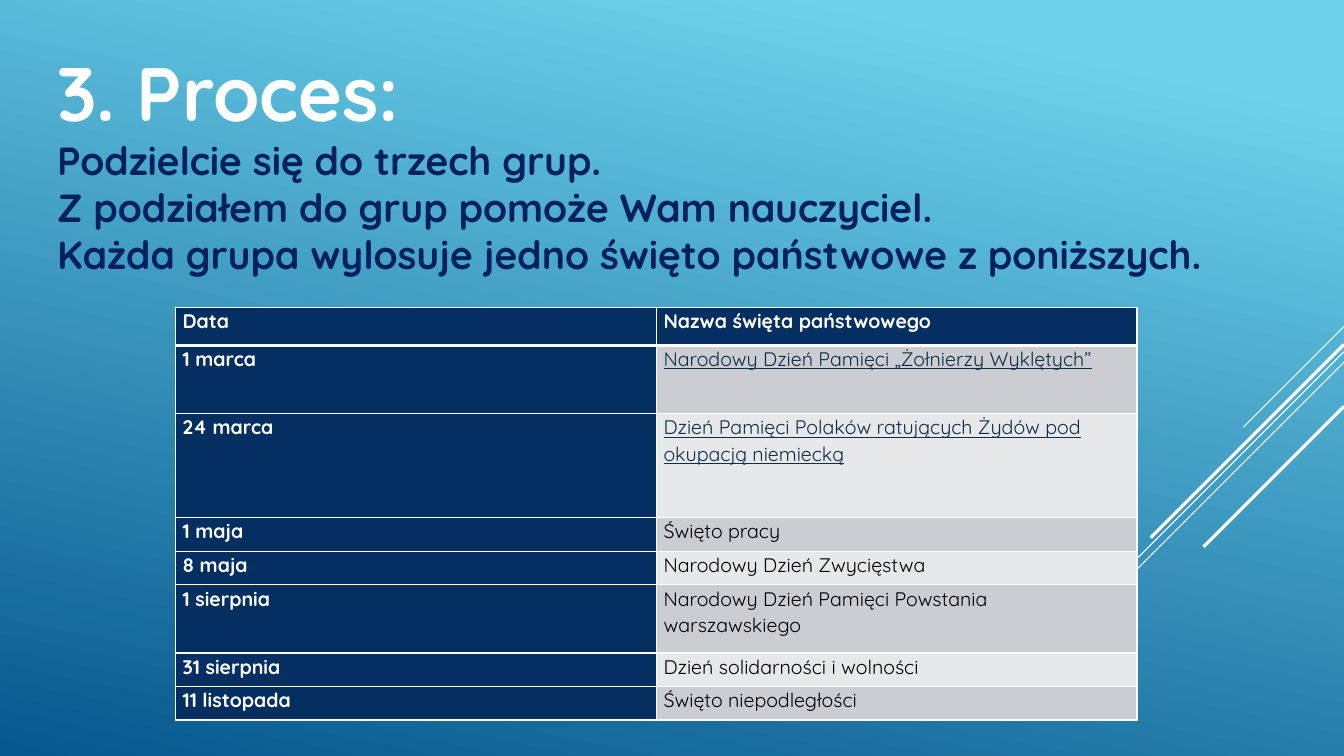
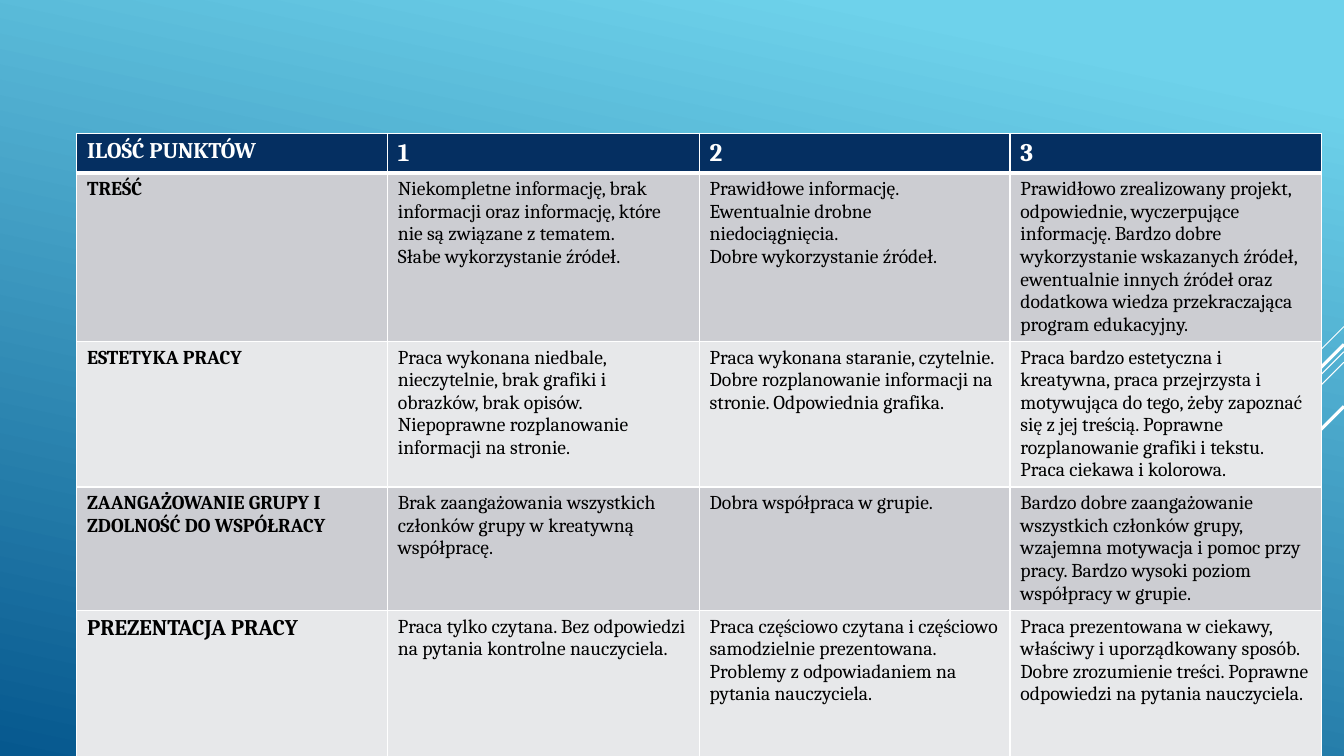
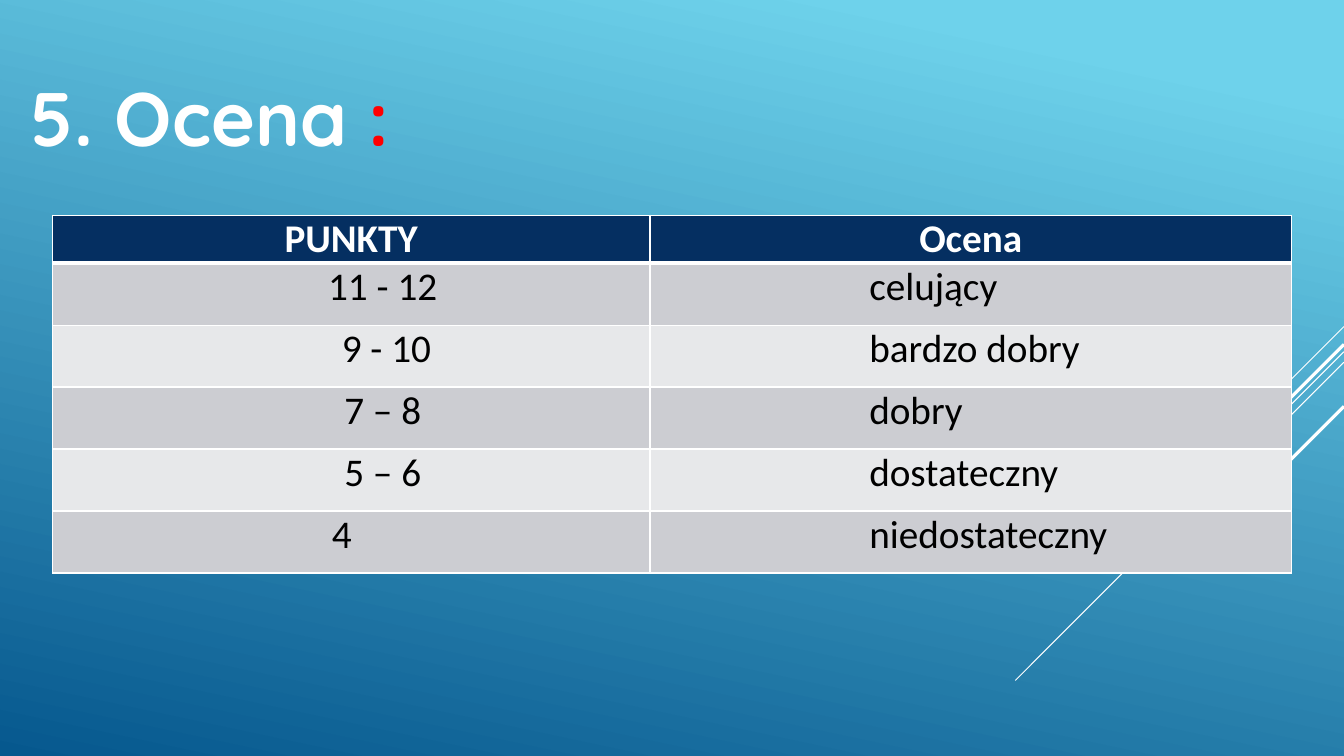
from dataclasses import dataclass

from lxml.etree import SubElement
from pptx import Presentation
from pptx.dml.color import RGBColor
from pptx.enum.shapes import MSO_CONNECTOR as Connector
from pptx.enum.text import MSO_ANCHOR as Anchor, PP_ALIGN as Align
from pptx.oxml.ns import qn
from pptx.util import Pt

PX = 9525
WIDTH, HEIGHT = 1280, 720
COLORS = {
    "white": "FFFFFF", "black": "000000", "red": "FF0000",
    "sky": "6ED2EB", "sea": "06588E", "ink": "002060",
    "header": "052F61", "link": "0D2E46",
    "odd": "CCCDD2", "even": "E7E8EA",
}
TITLE_FONT = "Quicksand"
TITLE_SIZE = 54
STRIPES = [(311, 96, 0.75), (335, 313, 0.75), (345, 199, 0.75),
           (328, 184, 2.25), (387, 134, 2.25)]

HOLIDAYS = [
    ("1 marca", "Narodowy Dzień Pamięci „Żołnierzy Wyklętych”", True),
    ("24 marca", "Dzień Pamięci Polaków ratujących Żydów pod okupacją niemiecką", True),
    ("1 maja", "Święto pracy", False),
    ("8 maja", "Narodowy Dzień Zwycięstwa", False),
    ("1 sierpnia", "Narodowy Dzień Pamięci Powstania warszawskiego", False),
    ("31 sierpnia", "Dzień solidarności i wolności", False),
    ("11 listopada", "Święto niepodległości", False),
]
CRITERIA = [
    ("TREŚĆ", 14,
     ["Niekompletne informację, brak informacji oraz informację, które nie są związane z tematem.",
      "Słabe wykorzystanie źródeł."],
     ["Prawidłowe informację. Ewentualnie drobne niedociągnięcia.",
      "Dobre wykorzystanie źródeł."],
     ["Prawidłowo zrealizowany projekt, odpowiednie, wyczerpujące informację. "
      "Bardzo dobre wykorzystanie wskazanych źródeł, ewentualnie innych źródeł "
      "oraz dodatkowa wiedza przekraczająca program edukacyjny."]),
    ("ESTETYKA PRACY", 14,
     ["Praca wykonana niedbale, nieczytelnie, brak grafiki i obrazków, brak opisów. "
      "Niepoprawne rozplanowanie informacji na stronie."],
     ["Praca wykonana staranie, czytelnie. Dobre rozplanowanie informacji na stronie. "
      "Odpowiednia grafika."],
     ["Praca bardzo estetyczna i kreatywna, praca przejrzysta i motywująca do tego, "
      "żeby zapoznać się z jej treścią. Poprawne rozplanowanie grafiki i tekstu. "
      "Praca ciekawa i kolorowa."]),
    ("ZAANGAŻOWANIE GRUPY I ZDOLNOŚĆ DO WSPÓŁRACY", 14,
     ["Brak zaangażowania wszystkich członków grupy w kreatywną współpracę."],
     ["Dobra współpraca w grupie."],
     ["Bardzo dobre zaangażowanie wszystkich członków grupy, wzajemna motywacja "
      "i pomoc przy pracy. Bardzo wysoki poziom współpracy w grupie."]),
    ("PREZENTACJA PRACY", 16,
     ["Praca tylko czytana. Bez odpowiedzi na pytania kontrolne nauczyciela."],
     ["Praca częściowo czytana i częściowo samodzielnie prezentowana. "
      "Problemy z odpowiadaniem na pytania nauczyciela."],
     ["Praca prezentowana w ciekawy, właściwy i uporządkowany sposób. "
      "Dobre zrozumienie treści. Poprawne odpowiedzi na pytania nauczyciela."]),
]
GRADES = [
    ("11 - 12", 67, 7, "celujący"),
    ("9 - 10", 74, 7, "bardzo dobry"),
    ("7 – 8", 67, 7, "dobry"),
    ("5 – 6", 67, 7, "dostateczny"),
    ("4", 7, 25, "niedostateczny"),
]


@dataclass
class Entry:
    """Text of one table cell with its look and side insets in px."""
    lines: list
    size: int
    color: str = "black"
    bold: bool = False
    underline: bool = False
    align: Align = Align.LEFT
    left: int = 7
    right: int = 7
    fill: str = ""


def rgb(name):
    """Return the named colour."""
    return RGBColor.from_string(COLORS[name])


def add_span(para, text, font, size, color, bold=False, underline=False):
    """Add one formatted run to a paragraph."""
    span = para.add_run()
    span.text = text
    span.font.name = font
    span.font.size = Pt(size)
    span.font.bold = bold
    span.font.underline = underline
    span.font.color.rgb = rgb(color)


def add_paragraphs(frame, count):
    """Return the given number of paragraphs of an empty text frame."""
    return [frame.paragraphs[0]] + [frame.add_paragraph() for _ in range(count - 1)]


def add_page(deck):
    """Add a blank page with the shared gradient and diagonal stripes."""
    page = deck.slides.add_slide(deck.slide_layouts[6])
    fill = page.background.fill
    fill.gradient()
    fill.gradient_angle = 258
    for stop, position, name in zip(fill.gradient_stops, (0.1, 1), ("sky", "sea")):
        stop.position = position
        stop.color.rgb = rgb(name)
    for top, run, weight in STRIPES:
        stripe = page.shapes.add_connector(
            Connector.STRAIGHT, WIDTH * PX, top * PX, (WIDTH - run) * PX, (top + run) * PX)
        stripe.line.color.rgb = rgb("white")
        stripe.line.width = Pt(weight)
        SubElement(stripe.element.spPr, qn("a:effectLst"))
    return page


def add_heading(page, box, spans, details=()):
    """Place a title made of coloured spans, with optional lines below it."""
    frame = page.shapes.add_textbox(*(length * PX for length in box)).text_frame
    frame.word_wrap = True
    title, *paras = add_paragraphs(frame, 1 + len(details))
    for text, color in spans:
        add_span(title, text, TITLE_FONT, TITLE_SIZE, color, True)
    for para, text in zip(paras, details):
        para.alignment = Align.JUSTIFY
        add_span(para, text, TITLE_FONT, 28, "ink", True)


def set_borders(cell, top, bottom):
    """Draw white cell borders with the given top and bottom weights."""
    properties = cell._tc.get_or_add_tcPr()
    for side, weight in (("L", 1), ("R", 1), ("T", top), ("B", bottom)):
        line = SubElement(properties, qn(f"a:ln{side}"), w=str(Pt(weight)))
        paint = SubElement(line, qn("a:solidFill"))
        SubElement(paint, qn("a:srgbClr"), val=COLORS["white"])


def fill_cell(cell, entry, fill, font, inset, spacing):
    """Write an entry into a table cell."""
    cell.fill.solid()
    cell.fill.fore_color.rgb = rgb(fill)
    cell.vertical_anchor = Anchor.TOP
    cell.margin_left, cell.margin_right = entry.left * PX, entry.right * PX
    cell.margin_top = cell.margin_bottom = inset * PX
    for para, text in zip(add_paragraphs(cell.text_frame, len(entry.lines)), entry.lines):
        para.alignment = entry.align
        para.line_spacing = spacing
        add_span(para, text, font, entry.size, entry.color, entry.bold, entry.underline)


def add_grid(page, corner, widths, heights, rows, font, inset=0, spacing=None):
    """Place a table with a dark header row and banded body rows."""
    left, top = corner
    table = page.shapes.add_table(
        len(heights), len(widths), left * PX, top * PX,
        sum(widths) * PX, sum(heights) * PX).table
    table.horz_banding = False
    for column, width in zip(table.columns, widths):
        column.width = width * PX
    for index, (row, height, entries) in enumerate(zip(table.rows, heights, rows)):
        row.height = height * PX
        band = "header" if index == 0 else "odd" if index % 2 else "even"
        for cell, entry in zip(row.cells, entries):
            set_borders(cell, 3 if index == 1 else 1, 3 if index == 0 else 1)
            fill_cell(cell, entry, entry.fill or band, font, inset, spacing)


def build_process(deck):
    """Build the page with the task and the list of holidays."""
    page = add_page(deck)
    add_heading(page, (45, 39, 1212, 646), [("3. Proces:", "white")], [
        "Podzielcie się do trzech grup.",
        "Z podziałem do grup pomoże Wam nauczyciel.",
        "Każda grupa wylosuje jedno święto państwowe z poniższych.",
    ])
    rows = [[Entry([text], 14, "white", True) for text in ("Data", "Nazwa święta państwowego")]]
    for date, name, linked in HOLIDAYS:
        rows.append([
            Entry([date], 14, "white", True, fill="header"),
            Entry([name], 14, "link" if linked else "black", underline=linked),
        ])
    add_grid(page, (167, 293), [458, 458], [36, 65, 99, 32, 32, 65, 32, 32],
             rows, TITLE_FONT, spacing=1.07)


def build_criteria(deck):
    """Build the page with the scoring criteria."""
    page = add_page(deck)
    sides = {"left": 10, "right": 10}
    rows = [[Entry(["ILOŚĆ PUNKTÓW"], 16, "white", True, **sides)]
            + [Entry([str(points)], 18, "white", True, **sides) for points in (1, 2, 3)]]
    for name, size, *levels in CRITERIA:
        rows.append([Entry([name], size, bold=True, **sides)]
                    + [Entry(lines, 14, **sides) for lines in levels])
    add_grid(page, (73, 127), [296, 297, 296, 297], [37, 160, 138, 117, 159],
             rows, "Cambria", inset=5)


def build_grades(deck):
    """Build the page that turns points into grades."""
    page = add_page(deck)
    rows = [[Entry([text], 28, "white", True, align=Align.CENTER) for text in ("PUNKTY", "Ocena")]]
    for points, left, right, grade in GRADES:
        rows.append([
            Entry([points], 28, align=Align.CENTER, left=left, right=right),
            Entry([grade], 28, left=209),
        ])
    add_grid(page, (50, 205), [569, 611], [45] + [59] * len(GRADES), rows, "Calibri")
    add_heading(page, (20, 63, 1040, 97), [("5. Ocena ", "white"), (":", "red")])


def main():
    """Build and save the deck."""
    deck = Presentation()
    deck.slide_width, deck.slide_height = WIDTH * PX, HEIGHT * PX
    build_process(deck)
    build_criteria(deck)
    build_grades(deck)
    deck.save("out.pptx")


if __name__ == "__main__":
    main()
